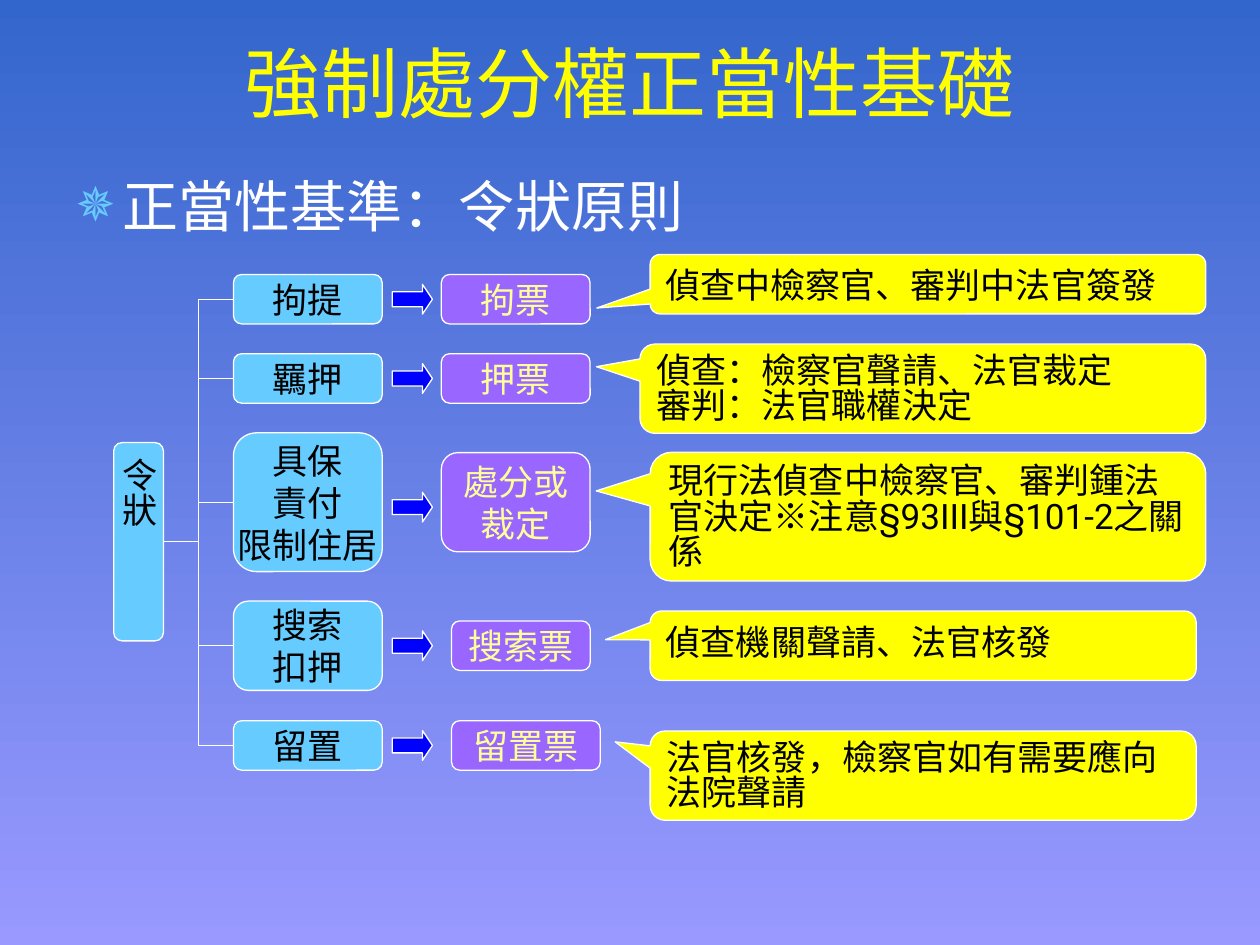
from collections import namedtuple

from lxml import etree
from pptx import Presentation
from pptx.dml import color
from pptx.enum import shapes, text
from pptx.oxml import ns
from pptx.util import Pt

COLORS = {
    "sky": "3366CC", "lilac": "9999FF", "yellow": "FFFF00", "white": "FFFFFF",
    "cyan": "66CCFF", "violet": "9966FF", "cream": "FFFF99", "blue": "0000FF",
    "black": "000000",
}
Box = namedtuple("Box", "left top width height")
Row = namedtuple("Row", "middle measure measure_height ticket ticket_box arrow_shift callout")
Callout = namedtuple("Callout", "lines box tip spacing")

ROWS = [
    Row(26, ["拘提"], 28.3, ["拘票"], Box(187.2, 0, 85, 28.3), 0,
        Callout(["偵查中檢察官、審判中法官簽發"], Box(306.5, -8.6, 317.5, 34), (-0.596, 0.401), 1)),
    Row(71.3, ["羈押"], 28.3, ["押票"], Box(187.2, 0, 85, 28.3), 0,
        Callout(["偵查：檢察官聲請、法官裁定", "審判：法官職權決定"],
                Box(300.7, 5.8, 323.3, 51), (-0.577, -0.246), 0.85)),
    Row(142, ["具保", "責付", "限制住居"], 79.3, ["處分或", "裁定"], Box(187.2, 0, 85, 56.7), 2.8,
        Callout(["現行法偵查中檢察官、審判鍾法官決定※注意§93III與§101-2之關係"],
                Box(306.5, 8.3, 317.5, 73.6), (-0.597, -0.2), 0.85)),
    Row(224, ["搜索", "扣押"], 51, ["搜索票"], Box(193, 0, 79.3, 28.3), 0,
        Callout(["偵查機關聲請、法官核發"], Box(306.5, 0, 312, 39.7), (-0.582, -0.088), 1)),
    Row(281, ["留置"], 28.3, ["留置票"], Box(193, 0, 85, 28.3), 0,
        Callout(["法官核發，檢察官如有需要應向法院聲請"],
                Box(306.5, 17.2, 312, 51), (-0.564, -0.378), 0.85)),
]


def rgb(name):
    """Return the named colour."""
    return color.RGBColor.from_string(COLORS[name])


def write(shape, lines, ink="black", size=20, font="Roboto", align=text.PP_ALIGN.CENTER,
          anchor=text.MSO_ANCHOR.MIDDLE, wrap=False, spacing=1):
    """Fill a shape with formatted paragraphs."""
    frame = shape.text_frame
    frame.word_wrap = wrap
    frame.vertical_anchor = anchor
    for index, line in enumerate(lines):
        paragraph = frame.add_paragraph() if index else frame.paragraphs[0]
        paragraph.alignment = align
        if spacing != 1:
            paragraph.line_spacing = spacing
        run = paragraph.add_run()
        run.text = line
        run.font.name = font
        run.font.size = Pt(size)
        run.font.color.rgb = rgb(ink)


def place(shape, box):
    """Move a shape to a box given in points."""
    shape.left, shape.top, shape.width, shape.height = (Pt(length) for length in box)


def add_block(slide, preset, box, fill, adjustments=()):
    """Add a filled shape with a thin white outline."""
    shape = slide.shapes.add_shape(preset, *(Pt(length) for length in box))
    shape.shadow.inherit = False
    shape.fill.solid()
    shape.fill.fore_color.rgb = rgb(fill)
    shape.line.color.rgb = rgb("white")
    shape.line.width = Pt(0.75)
    for index, value in enumerate(adjustments):
        shape.adjustments[index] = value
    return shape


def add_node(slide, box, lines, fill, ink="black"):
    """Add a rounded node with centred text."""
    node = add_block(slide, shapes.MSO_SHAPE.FLOWCHART_ALTERNATE_PROCESS, box, fill)
    write(node, lines, ink)
    return node


def add_branch(slide, root, node):
    """Join the root to a node with an elbow line."""
    branch = slide.shapes.add_connector(shapes.MSO_CONNECTOR.ELBOW, 0, 0, 0, 0)
    branch.begin_connect(root, 3)
    branch.end_connect(node, 1)
    branch.line.color.rgb = rgb("white")
    branch.line.width = Pt(0.75)
    etree.SubElement(branch.element.spPr, ns.qn("a:effectLst"))


def add_row(slide, box, row, root):
    """Place one measure, its arrow, its ticket and its callout."""
    def centred(left, shift, width, height):
        """Return a box centred on the row."""
        return Box(box.left + left, box.top + row.middle + shift - height / 2, width, height)

    measure = add_node(slide, centred(68.4, 0, 85, row.measure_height), row.measure, "cyan")
    add_branch(slide, root, measure)
    add_block(slide, shapes.MSO_SHAPE.RIGHT_ARROW, centred(159.1, row.arrow_shift, 23, 17),
              "blue", (0.5, 0.335))
    add_node(slide, centred(*row.ticket_box), row.ticket, "violet", "cream")
    callout = add_block(slide, shapes.MSO_SHAPE.ROUNDED_RECTANGULAR_CALLOUT,
                        centred(*row.callout.box), "yellow", (*row.callout.tip, 0.167))
    write(callout, row.callout.lines, align=text.PP_ALIGN.LEFT, anchor=text.MSO_ANCHOR.TOP,
          wrap=True, spacing=row.callout.spacing)


def add_diagram(slide, box):
    """Place the warrant tree in the given box."""
    root = add_node(slide, Box(box.left, box.top + 107.9, 28.4, 113.3), ["令狀"], "cyan")
    root.text_frame._txBody.bodyPr.set("vert", "eaVert")
    for row in ROWS:
        add_row(slide, box, row, root)


def add_title(slide, box, title):
    """Format the title placeholder."""
    place(slide.shapes.title, box)
    write(slide.shapes.title, [title], "yellow", 44, "Arial", wrap=True)


def add_body(slide, box, line):
    """Format the body placeholder as a list with a star bullet."""
    body = slide.placeholders[1]
    place(body, box)
    write(body, [line], "white", 32, "Arial", text.PP_ALIGN.LEFT, text.MSO_ANCHOR.TOP, True)
    paragraph = body.text_frame.paragraphs[0]
    paragraph.space_before = Pt(6.4)
    properties = paragraph._p.get_or_add_pPr()
    properties.set("marL", str(Pt(27)))
    properties.set("indent", str(Pt(-27)))
    bullet_color = etree.SubElement(properties, ns.qn("a:buClr"))
    etree.SubElement(bullet_color, ns.qn("a:srgbClr"), val=COLORS["cyan"])
    etree.SubElement(properties, ns.qn("a:buSzPct"), val="85000")
    etree.SubElement(properties, ns.qn("a:buChar"), char="✵")


def paint_background(slide):
    """Fill the background from top to bottom."""
    fill = slide.background.fill
    fill.gradient()
    fill.gradient_angle = 270
    for stop, name, position in zip(fill.gradient_stops, ("sky", "lilac"), (0, 1)):
        stop.color.rgb = rgb(name)
        stop.position = position


def main():
    """Build and save the slide."""
    presentation = Presentation()
    presentation.slide_width, presentation.slide_height = Pt(720), Pt(540)
    slide = presentation.slides.add_slide(presentation.slide_layouts[1])
    paint_background(slide)
    add_title(slide, Box(36, 15, 648, 63), "強制處分權正當性基礎")
    add_body(slide, Box(36, 94.5, 648, 389), "正當性基準：令狀原則")
    add_diagram(slide, Box(65, 145, 624, 324))
    presentation.save("out.pptx")


if __name__ == "__main__":
    main()
